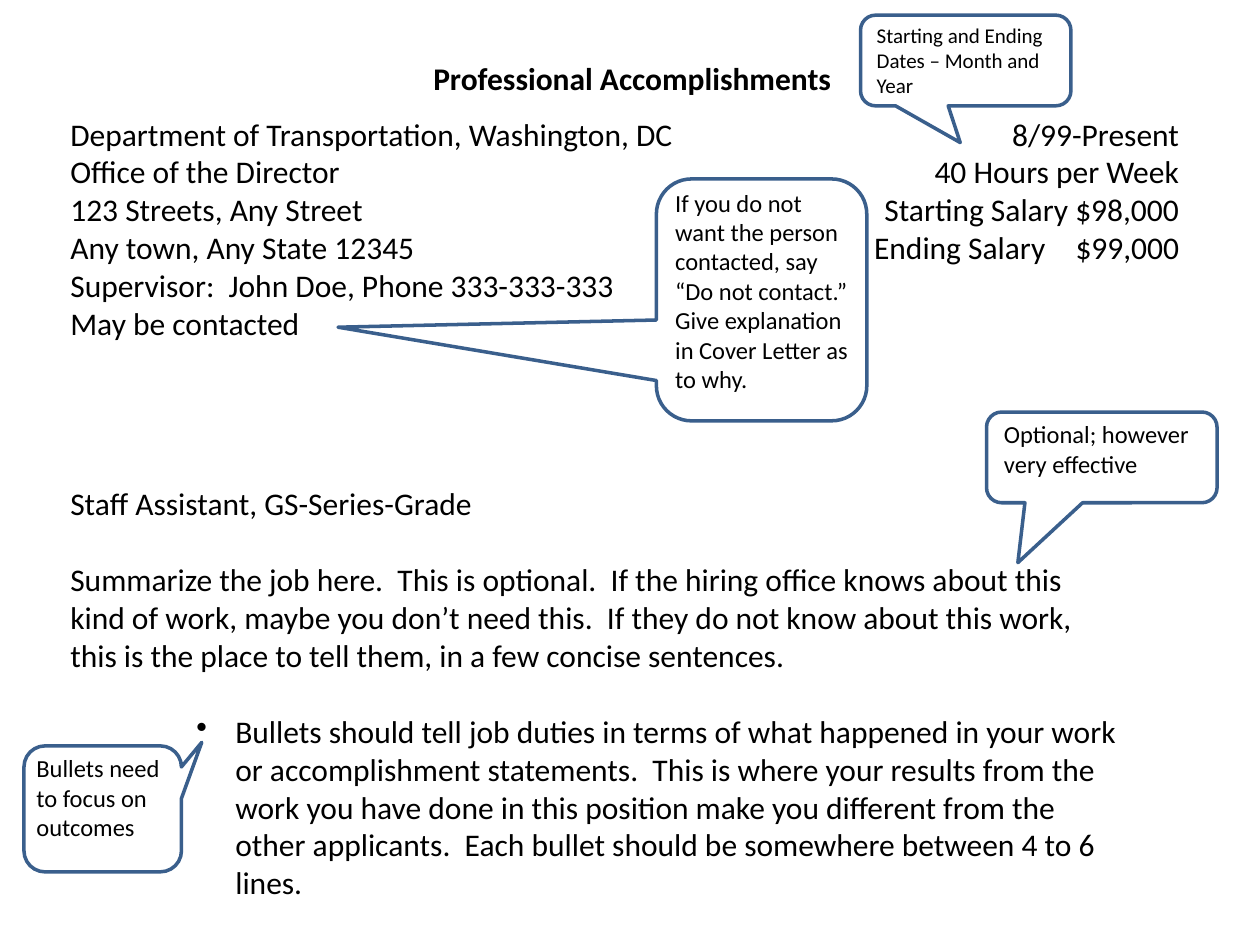
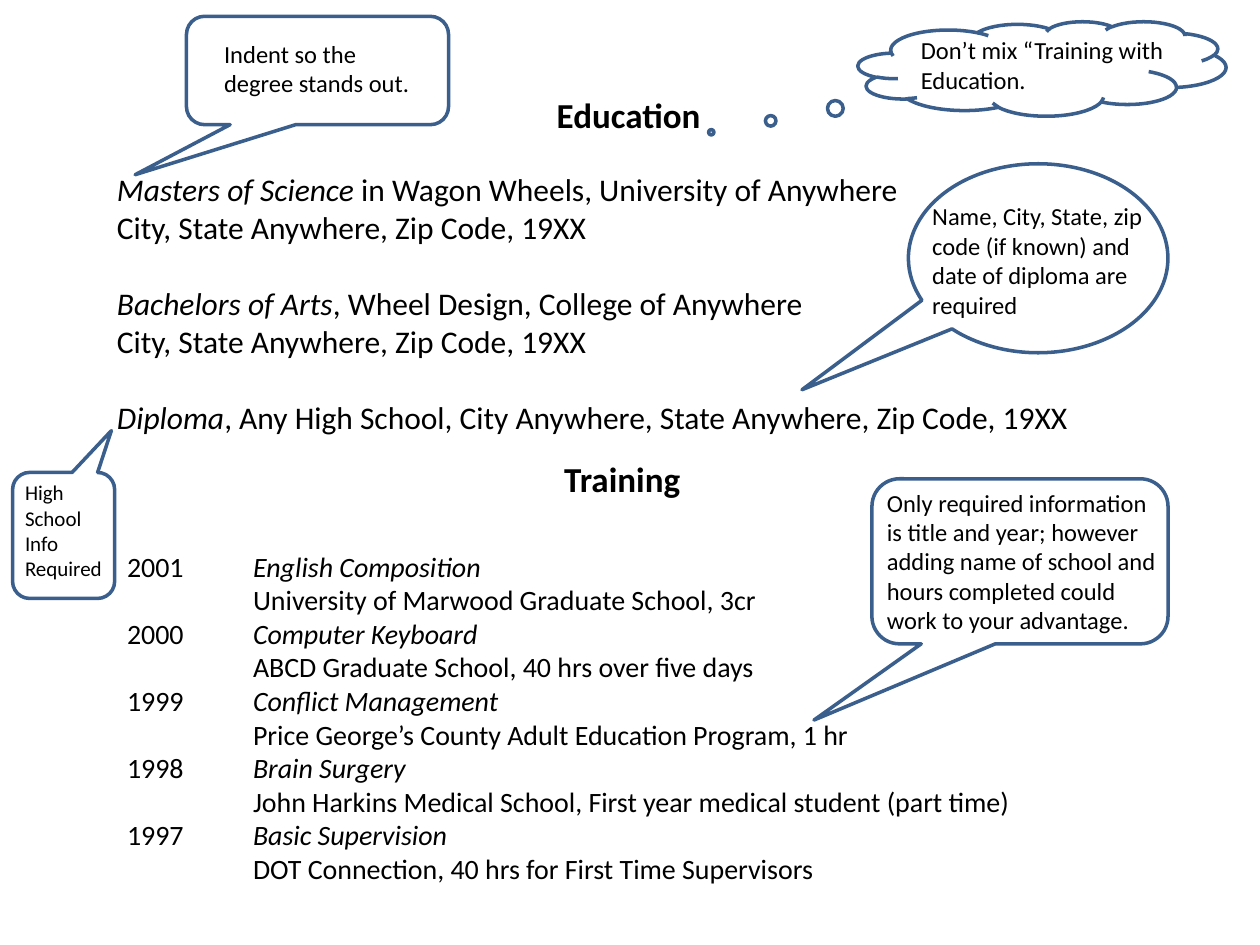
from lxml import etree
from pptx import Presentation
from pptx.dml.color import RGBColor
from pptx.enum.shapes import MSO_SHAPE as Preset
from pptx.enum.text import MSO_AUTO_SIZE as AutoSize
from pptx.oxml.ns import qn
from pptx.util import Inches, Pt

COLOURS = {"text": "000000", "outline": "3A5F8C"}
FONT = "Calibri"
BODY, COURSE, HEADING, NOTE, SMALL_NOTE = 18, 16, 20, 14, 12
BLANK_LINE = 22
CORNER = 0.167
ROUND = Preset.ROUNDED_RECTANGULAR_CALLOUT


def colour(name):
    """Return a named colour."""
    return RGBColor.from_string(COLOURS[name])


def add_text(shapes, box, paragraphs, size, wrap=True, **formats):
    """Write paragraphs, each a list of (text, formats) spans, and return them."""
    frame = shapes.add_textbox(*map(Inches, box)).text_frame
    for name, value in {"word_wrap": wrap, "auto_size": AutoSize.SHAPE_TO_FIT_TEXT}.items():
        setattr(frame, name, value)
    for index, spans in enumerate(paragraphs):
        para = frame.add_paragraph() if index else frame.paragraphs[0]
        for text, extra in spans:
            span = para.add_run()
            span.text = text
            font = {"name": FONT, "size": Pt(size), **formats, **extra}
            for name, value in font.items():
                setattr(span.font, name, value)
            span.font.color.rgb = colour("text")
    return frame.paragraphs


def plain(*lines):
    """Turn lines into paragraphs of one unformatted span each."""
    return [[(line, {})] for line in lines]


def set_tabs(para, *stops):
    """Give a paragraph tab stops, each a position in inches and an alignment."""
    tabs = etree.SubElement(para._p.get_or_add_pPr(), qn("a:tabLst"))
    for position, align in stops:
        etree.SubElement(tabs, qn("a:tab"), pos=str(Inches(position)), algn=align)


def set_indent(para, left, first=0, bullet=None):
    """Indent a paragraph and give it a bullet if one is named."""
    properties = para._p.get_or_add_pPr()
    for name, value in {"marL": left, "indent": first}.items():
        properties.set(name, str(Inches(value)))
    if bullet:
        etree.SubElement(properties, qn("a:buChar"), char=bullet)


def add_heading(page, box, text, size=HEADING):
    """Write a bold section heading."""
    add_text(page.shapes, box, plain(text), size, wrap=False, bold=True)


def add_callout(page, box, pointer, note, note_box, size=NOTE, kind=ROUND):
    """Draw an outlined callout with a note placed relative to its box."""
    shapes = page.shapes.add_group_shape().shapes
    bubble = shapes.add_shape(kind, *map(Inches, box))
    bubble.shadow.inherit = False
    bubble.fill.background()
    bubble.line.color.rgb = colour("outline")
    bubble.line.width = Pt(2)
    adjustments = (*pointer, CORNER) if kind == ROUND else pointer
    for index, value in enumerate(adjustments):
        bubble.adjustments[index] = value
    left, top, width, height = note_box
    add_text(shapes, (box[0] + left, box[1] + top, width, height), plain(note), size)


def add_employer(page, box):
    """Write the employer's details with dates and pay at the right edge."""
    edge = (8.8, "r")
    lines = plain(
        "Department of Transportation, Washington, DC\t8/99-Present",
        "Office of the Director\t40 Hours per Week",
        "123 Streets, Any Street\tStarting Salary $98,000",
        "Any town, Any State 12345\tEnding Salary\t$99,000",
        "Supervisor:  John Doe, Phone 333-333-333",
        "May be contacted",
    )
    paragraphs = add_text(page.shapes, box, lines, BODY)
    for para in paragraphs[:3]:
        set_tabs(para, edge)
    set_tabs(paragraphs[3], (7.74, "r"), edge)


def add_duties(page, box):
    """Write the job title, its summary and the bulleted duties."""
    lines = plain(
        "Staff Assistant, GS-Series-Grade",
        "Summarize the job here.  This is optional.  If the hiring office knows about this "
        "kind of work, maybe you don’t need this.  If they do not know about this work, "
        "this is the place to tell them, in a few concise sentences.",
        "Bullets should tell job duties in terms of what happened in your work or "
        "accomplishment statements.  This is where your results from the work you have done "
        "in this position make you different from the other applicants.  Each bullet should "
        "be somewhere between 4 to 6 lines.",
    )
    paragraphs = add_text(page.shapes, box, lines, BODY)
    set_indent(paragraphs[2], 1.31, -0.31, "•")
    for para in paragraphs[1:]:
        para.space_before = Pt(BLANK_LINE)


def add_degrees(page, box):
    """Write the degrees with their names in italics."""
    italic = {"italic": True}
    address = [("City, State Anywhere, Zip Code, 19XX", {})]
    lines = [
        [("Masters of Science ", italic), ("in Wagon Wheels, University of Anywhere", {})],
        address,
        [("Bachelors of Arts", italic), (", Wheel Design, College of Anywhere", {})],
        address,
        [("Diploma", italic),
         (", Any High School, City Anywhere, State Anywhere, Zip Code, 19XX", {})],
    ]
    paragraphs = add_text(page.shapes, box, lines, BODY)
    for para in paragraphs:
        set_indent(para, 0.5)
    for para in paragraphs[2::2]:
        para.space_before = Pt(BLANK_LINE)


def add_courses(page, box):
    """List each course by year, with its school on the next line."""
    courses = [
        ("2001", "English Composition", "University of Marwood Graduate School, 3cr"),
        ("2000", "Computer Keyboard", "ABCD Graduate School, 40 hrs over five days"),
        ("1999", "Conflict Management", "Price George’s County Adult Education Program, 1 hr"),
        ("1998", "Brain Surgery",
         "John Harkins Medical School, First year medical student (part time)"),
        ("1997", "Basic Supervision", "DOT Connection, 40 hrs for First Time Supervisors"),
    ]
    lines = []
    for year, course, school in courses:
        lines.append([(f"{year}\t", {}), (course, {"italic": True})])
        lines.append([(f"\t{school}", {})])
    for para in add_text(page.shapes, box, lines, COURSE):
        set_tabs(para, (1, "l"))


def build_accomplishments(page):
    """Build the work experience slide."""
    add_heading(page, (3.34, 0.42, 3.38, 0.4), "Professional Accomplishments", BODY)
    add_employer(page, (0.46, 0.86, 9.08, 2.52))
    add_callout(page, (5.21, 1.42, 1.67, 1.92), (-2.013, 0.113),
                "If you do not want the person contacted, say “Do not contact.” "
                "Give explanation in Cover Letter as to why.", (0.05, 0.02, 1.58, 1.99))
    add_duties(page, (0.46, 3.79, 8.54, 3.43))
    add_callout(page, (6.83, 0.12, 1.67, 0.72), (-0.026, 0.905),
                "Starting and Ending Dates – Month and Year",
                (0.03, 0.01, 1.58, 0.71), SMALL_NOTE)
    add_callout(page, (7.83, 3.27, 1.83, 0.72), (-0.364, 1.16),
                "Optional; however very effective", (0.04, 0.01, 1.8, 1.04))
    add_callout(page, (0.19, 5.92, 1.25, 1), (0.629, -0.528),
                "Bullets need to focus on outcomes", (0, 0.01, 1.21, 1.04))


def build_education(page):
    """Build the education and training slide."""
    add_heading(page, (4.32, 0.69, 1.35, 0.44), "Education")
    add_degrees(page, (0.33, 1.3, 9.42, 2.22))
    add_callout(page, (1.48, 0.13, 2.08, 0.86), (-0.696, 0.962),
                "Indent so the degree stands out.", (0.2, 0.13, 1.81, 0.69))
    add_callout(page, (6.81, 0.17, 2.92, 0.75), (-0.899, 0.673),
                "Don’t mix “Training with Education.", (0.4, 0.06, 2.13, 0.57),
                kind=Preset.CLOUD_CALLOUT)
    add_callout(page, (7.21, 1.3, 2.06, 1.5), (-0.91, 0.696),
                "Name, City, State, zip code (if known) and date of diploma are required",
                (0.09, 0.25, 1.88, 1.04), kind=Preset.OVAL_CALLOUT)
    add_callout(page, (0.1, 3.75, 0.81, 1), (0.468, -0.832),
                "High School Info Required", (0, 0.01, 0.81, 0.91), SMALL_NOTE)
    add_heading(page, (4.38, 3.58, 1.13, 0.44), "Training")
    add_courses(page, (0.91, 4.31, 7.35, 2.79))
    add_callout(page, (6.92, 3.8, 2.35, 1.31), (-0.696, 0.962),
                "Only required information is title and year; however adding name of school "
                "and hours completed could work to your advantage.", (0.02, 0.02, 2.35, 1.28))


def main():
    """Build and save the deck."""
    deck = Presentation()
    deck.slide_width, deck.slide_height = Inches(10), Inches(7.5)
    for build in (build_accomplishments, build_education):
        build(deck.slides.add_slide(deck.slide_layouts[6]))
    deck.save("out.pptx")


if __name__ == "__main__":
    main()
